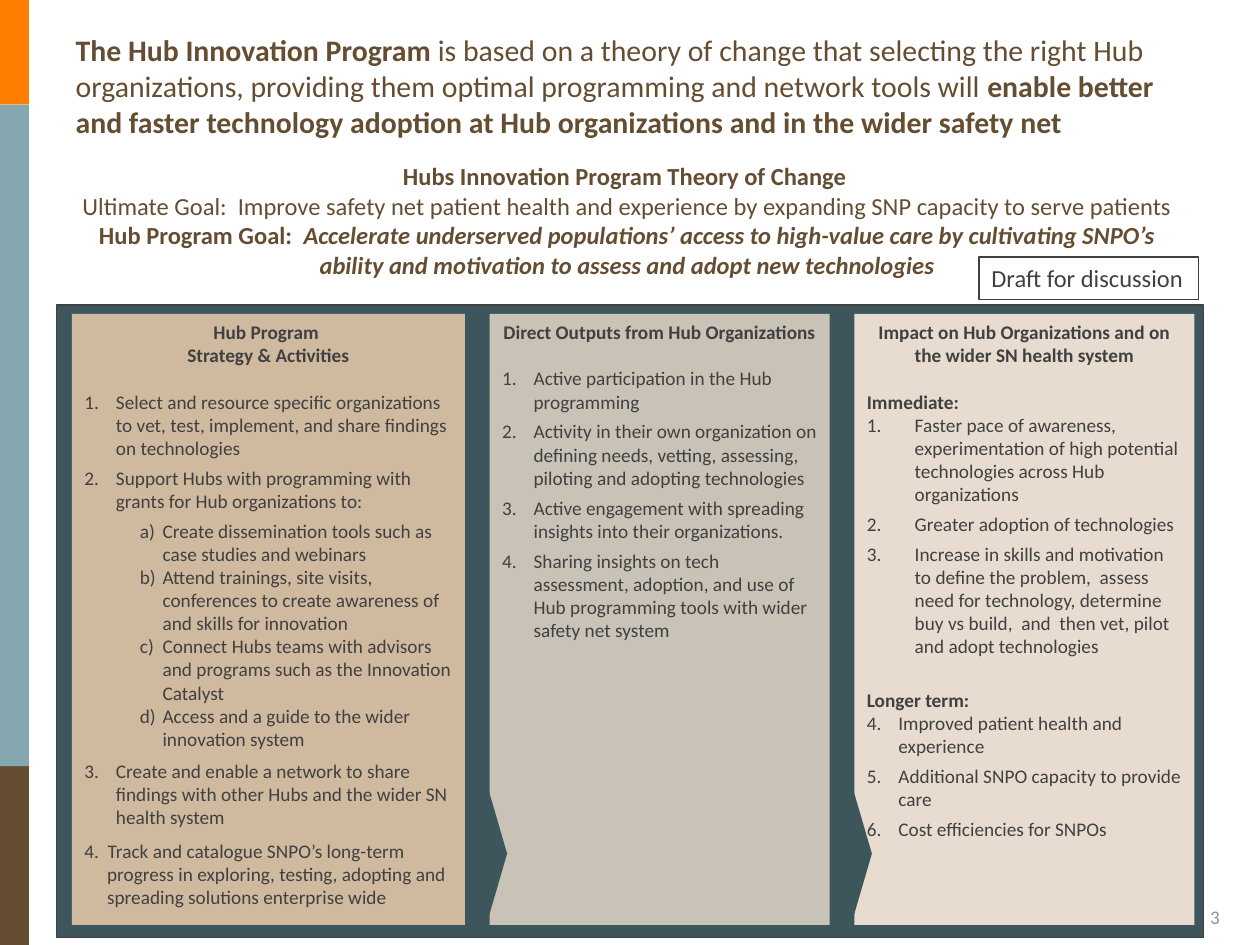
from dataclasses import dataclass
from typing import NamedTuple

from lxml import etree
from pptx import Presentation
from pptx.dml.color import RGBColor
from pptx.enum.shapes import MSO_SHAPE
from pptx.enum.text import MSO_ANCHOR, MSO_AUTO_SIZE, PP_ALIGN
from pptx.oxml.ns import qn
from pptx.util import Inches, Pt

RECT, PLATE = MSO_SHAPE.RECTANGLE, MSO_SHAPE.PENTAGON
LEFT, MID, RIGHT = PP_ALIGN.LEFT, PP_ALIGN.CENTER, PP_ALIGN.RIGHT
TOP, CENTER = MSO_ANCHOR.TOP, MSO_ANCHOR.MIDDLE
FIXED = MSO_AUTO_SIZE.NONE
COLS, ROWS = 100, 75


@dataclass(frozen=True)
class Theme:
    font: str = "Calibri"
    orange: str = "FF7E00"
    blue: str = "84A6AE"
    brown: str = "654D32"
    teal: str = "3D565C"
    ink: str = "404040"
    gray: str = "939393"
    tan: str = "CFB99F"
    stone: str = "C9C2B7"
    cream: str = "E7DCCF"
    lead: float = 17
    goal: float = 14
    body: float = 11
    gap: float = 3.9
    line: float = 13.4


class Box(NamedTuple):
    col: float
    row: float
    wide: float
    high: float


class Run(NamedTuple):
    text: str
    bold: bool = False
    slant: bool = False


class Para(NamedTuple):
    runs: tuple[Run, ...]
    align: PP_ALIGN = LEFT
    after: float = 0
    before: float = 0
    mark: str = ""
    start: int = 1
    left: float = 0
    hang: float = 0
    level: int = 0


class Column(NamedTuple):
    wide: float
    fill: str
    paras: list[Para]


T = Theme()
deck = Presentation()
deck.slide_width, deck.slide_height = Inches(10), Inches(7.5)
slide = deck.slides.add_slide(deck.slide_layouts.get_by_name("Comparison"))
shapes = slide.shapes


def place(box: Box) -> tuple[int, int, int, int]:
    x, y = deck.slide_width / COLS, deck.slide_height / ROWS
    return int(box.col * x), int(box.row * y), int(box.wide * x), int(box.high * y)


def move(shape, box: Box) -> None:
    shape.left, shape.top, shape.width, shape.height = place(box)


def paint(shape, color: str) -> None:
    shape.fill.solid()
    shape.fill.fore_color.rgb = RGBColor.from_string(color)


def draw(kind: MSO_SHAPE, box: Box, fill: str = "", edge: str = ""):
    shape = shapes.add_shape(kind, *place(box))
    shape.shadow.inherit = False
    if fill:
        paint(shape, fill)
    else:
        shape.fill.background()
    if edge:
        shape.line.color.rgb = RGBColor.from_string(edge)
        shape.line.width = Pt(0.75)
    else:
        shape.line.fill.background()
    return shape


def bullet(props, para: Para) -> None:
    props.set("marL", str(Inches(para.left)))
    props.set("indent", str(-Inches(para.hang)))
    if not para.mark:
        etree.SubElement(props, qn("a:buNone"))
        return
    tint = etree.SubElement(props, qn("a:buClr"))
    etree.SubElement(tint, qn("a:srgbClr"), val=T.ink)
    etree.SubElement(props, qn("a:buFont"), typeface=T.font)
    auto = etree.SubElement(props, qn("a:buAutoNum"), type=para.mark)
    if para.start > 1:
        auto.set("startAt", str(para.start))


def write(shape, paras: list[Para], *, size: float = T.body, color: str = T.ink,
          anchor: MSO_ANCHOR = TOP, wrap: bool = True) -> None:
    frame = shape.text_frame
    frame.word_wrap, frame.auto_size = wrap, FIXED
    frame.vertical_anchor = anchor
    for i, para in enumerate(paras):
        p = frame.add_paragraph() if i else frame.paragraphs[0]
        p.alignment, p.level, p.line_spacing = para.align, para.level, 1.0
        p.space_before, p.space_after = Pt(para.before), Pt(para.after)
        bullet(p._p.get_or_add_pPr(), para)
        for run in para.runs:
            for j, part in enumerate(run.text.split("\n")):
                if j:
                    p.add_line_break()
                if part:
                    r = p.add_run()
                    r.text = part
                    r.font.name, r.font.size = T.font, Pt(size)
                    r.font.bold, r.font.italic = run.bold, run.slant
                    r.font.color.rgb = RGBColor.from_string(color)


def plain(text: str, **kind) -> Para:
    return Para((Run(text),), **kind)


def head(text: str, align: PP_ALIGN = MID, after: float = T.line) -> Para:
    return Para((Run(text, True),), align, after)


def item(text: str, left: float = 0.25, after: float = T.gap, start: int = 1) -> Para:
    return plain(text, after=after, mark="arabicPeriod", start=start, left=left, hang=left)


def sub(text: str, after: float = 0) -> Para:
    return plain(text, after=after, mark="alphaLcParenR", left=0.62, hang=0.18, level=1)


columns = [
    Column(31.2, T.tan, [
        head("Hub Program ", after=0),
        head("Strategy & Activities"),
        item("Select and resource specific organizations to vet, test, implement, and share findings on technologies"),
        item("Support Hubs with programming with grants for Hub organizations to:"),
        sub("Create dissemination tools such as case studies and webinars"),
        sub("Attend trainings, site visits, conferences to create awareness of and skills for innovation"),
        sub("Connect Hubs teams with advisors and programs such as the Innovation Catalyst"),
        sub("Access and a guide to the wider innovation system", 5),
        item("Create and enable a network to share findings with other Hubs and the wider SN health system", after=0),
        plain("4.  Track and catalogue SNPO’s long-term progress in exploring, testing, adopting and "
              "spreading solutions enterprise wide", before=6, left=0.18, hang=0.18)]),
    Column(27, T.stone, [
        head("Direct Outputs from Hub Organizations"),
        item("Active participation in the Hub programming"),
        item("Activity in their own organization on defining needs, vetting, assessing, piloting and adopting technologies"),
        item("Active engagement with spreading insights into their organizations."),
        item("Sharing insights on tech assessment, adoption, and use of  Hub programming tools with wider safety net system")]),
    Column(27, T.cream, [
        head("Impact on Hub Organizations and on the wider SN health system"),
        head("Immediate:", LEFT, 0),
        item("Faster pace of awareness, experimentation of high potential technologies across Hub organizations", 0.38),
        item("Greater adoption of technologies", 0.38),
        item("Increase in skills and motivation to define the problem,  assess need for technology, determine "
             "buy vs build,  and  then vet, pilot and adopt technologies", 0.38, T.line + T.gap),
        head("Longer term:", LEFT, 0),
        item("Improved patient health and experience", start=4),
        item("Additional SNPO capacity to provide care", start=4),
        item("Cost efficiencies for SNPOs", start=4)])]

back = [draw(RECT, Box(4.5, 24.2, 91, 50.2), T.teal, T.ink)]
row = 0
for high, fill in ((8.3, T.orange), (52.5, T.blue), (14.2, T.brown)):
    back.append(draw(RECT, Box(0, row, 2.3, high), fill))
    row += high
for shape in back:
    shapes._spTree.insert(2, shape._element)

title, lead, *bodies = slide.placeholders
move(title, Box(4.8, 12.8, 90, 11.7))
title.text_frame.margin_top = 0
write(title, [Para((
    Run("Hubs Innovation Program Theory of Change \n", True),
    Run("Ultimate Goal:  Improve safety net patient health and experience by expanding SNP capacity to serve patients\n"),
    Run("Hub Program Goal:  ", True),
    Run("Accelerate underserved populations’ access to high-value care by cultivating SNPO’s "
        "ability and motivation to assess and adopt new technologies", True, True)), MID)],
    size=T.goal, color=T.brown)

move(lead, Box(5, 2.3, 90, 9))
write(lead, [Para((
    Run("The Hub Innovation Program ", True),
    Run("is based on a theory of change that selecting the right Hub organizations, "
        "providing them optimal programming and network tools will "),
    Run("enable better and faster technology adoption at Hub organizations and in the wider safety net", True)))],
    size=T.lead, color=T.brown, anchor=CENTER)

left = 5.7
for i, (body, col) in enumerate(zip(bodies, columns)):
    move(body, Box(left, 24.9, col.wide, 48.5))
    paint(body, col.fill)
    write(body, col.paras)
    if i:
        arrow = draw(PLATE, Box(left - 0.7, 62.2, 2.1, 11.1), T.teal)
        arrow.adjustments[0] = 0.77
    left += col.wide + 1.95

note = draw(RECT, Box(77.7, 20.4, 17.4, 3.4), edge=T.ink)
write(note, [plain("Draft for discussion")], size=T.goal, wrap=False)
page = shapes.add_textbox(*place(Box(77, 72.1, 20.8, 1.3)))
write(page, [plain("3", align=RIGHT)], color=T.gray, anchor=CENTER)
deck.save("out.pptx")
